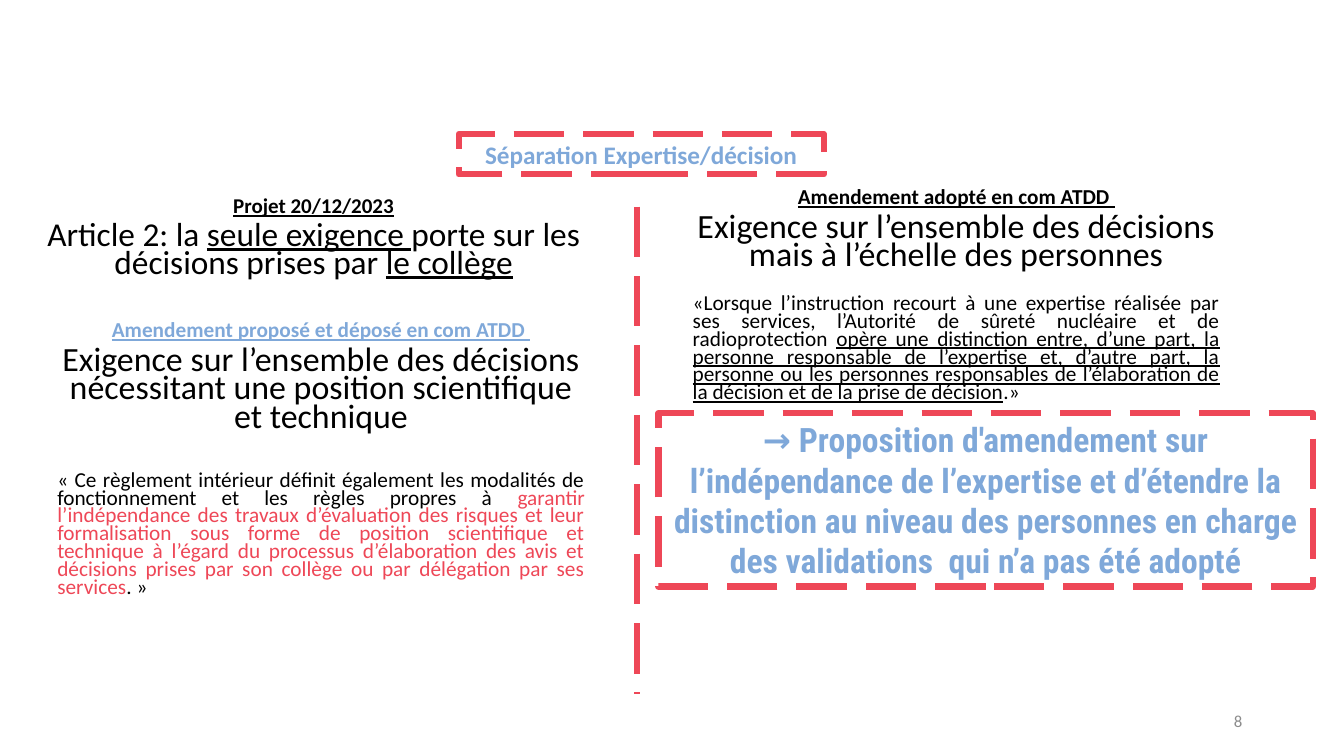
from dataclasses import dataclass

from lxml import etree
from pptx import Presentation
from pptx.dml.color import RGBColor
from pptx.enum.dml import MSO_LINE
from pptx.enum.shapes import MSO_CONNECTOR, MSO_SHAPE
from pptx.enum.text import MSO_ANCHOR, MSO_AUTO_SIZE, PP_ALIGN
from pptx.oxml.ns import qn
from pptx.util import Inches, Pt

LONG_DASH = MSO_LINE.LONG_DASH
STRAIGHT = MSO_CONNECTOR.STRAIGHT
RECTANGLE = MSO_SHAPE.RECTANGLE
TOP, MIDDLE = MSO_ANCHOR.TOP, MSO_ANCHOR.MIDDLE
NO_AUTOFIT = MSO_AUTO_SIZE.NONE
CENTER, JUSTIFY, RIGHT = PP_ALIGN.CENTER, PP_ALIGN.JUSTIFY, PP_ALIGN.RIGHT
TWO_CONTENT_LAYOUT = 3


@dataclass(frozen=True)
class Theme:
    black: str = "000000"
    red: str = "EE4757"
    blue: str = "7FA8D9"
    grey: str = "8C8C8C"
    body_font: str = "Calibri"
    proposal_font: str = "Roboto Condensed"
    project_heading: float = 15
    project_claim: float = 23.8
    quote: float = 15.2
    claim: float = 24.2
    title: float = 18
    proposal: float = 24
    page_number: float = 12
    dash_width: float = 4.5
    column_spacing: float = 0.7


THEME = Theme()


@dataclass(frozen=True)
class Span:
    text: str
    color: str = THEME.black
    underline: bool = False


@dataclass(frozen=True)
class Line:
    """One paragraph with its own size and alignment."""
    spans: tuple[Span, ...]
    size: float
    bold: bool = False
    align: PP_ALIGN = CENTER
    before: float = 5
    font: str = THEME.body_font


@dataclass(frozen=True)
class Box:
    left: float
    top: float
    width: float
    height: float

    def lengths(self) -> tuple:
        return tuple(Inches(v) for v in (self.left, self.top, self.width, self.height))


def place(shape, box: Box) -> None:
    shape.left, shape.top, shape.width, shape.height = box.lengths()


def write(shape, lines: list[Line], anchor=TOP, column: bool = False) -> None:
    """Fill a shape with text; a column is indented, unbulleted and tightly set."""
    frame = shape.text_frame
    frame.word_wrap = True
    frame.auto_size = NO_AUTOFIT
    frame.vertical_anchor = anchor
    for index, line in enumerate(lines):
        paragraph = frame.paragraphs[0] if index == 0 else frame.add_paragraph()
        paragraph.alignment = line.align
        paragraph.space_before = Pt(line.before if index else 0)
        paragraph.space_after = Pt(0)
        if column:
            paragraph.level = 1
            paragraph.line_spacing = THEME.column_spacing
            properties = paragraph._p.get_or_add_pPr()
            properties.set("marL", str(Inches(0.5)))
            properties.set("indent", "0")
            etree.SubElement(properties, qn("a:buNone"))
        for span in line.spans:
            run = paragraph.add_run()
            run.text = span.text
            font = run.font
            font.name, font.size, font.bold = line.font, Pt(line.size), line.bold
            font.underline = span.underline
            font.color.rgb = RGBColor.from_string(span.color)


def dash(line) -> None:
    line.color.rgb = RGBColor.from_string(THEME.red)
    line.width = Pt(THEME.dash_width)
    line.dash_style = LONG_DASH


def add_divider(slide, x: float, top: float, bottom: float) -> None:
    divider = slide.shapes.add_connector(
        STRAIGHT, Inches(x), Inches(top), Inches(x), Inches(bottom))
    dash(divider.line)
    etree.SubElement(divider._element.spPr, qn("a:effectLst"))


PROJECT = [
    Line((Span("Projet 20/12/2023", underline=True),), THEME.project_heading, bold=True),
    Line((Span("Article 2: la "), Span("seule exigence ", underline=True),
          Span("porte sur les décisions prises par "),
          Span("le collège", underline=True)), THEME.project_claim),
]
PROPOSED = [
    Line((Span("Amendement proposé et déposé en com ATDD ", THEME.blue, True),),
         THEME.quote, bold=True),
    Line((Span("Exigence sur l’ensemble des décisions nécessitant une position "
               "scientifique et technique"),), THEME.claim),
    Line((Span("« Ce règlement intérieur définit également les modalités de "
               "fonctionnement et les règles propres à "),
          Span("garantir l’indépendance des travaux d’évaluation des risques et leur "
               "formalisation sous forme de position scientifique et technique à "
               "l’égard du processus d’élaboration des avis et décisions prises par "
               "son collège ou par délégation par ses services", THEME.red),
          Span(". »")), THEME.quote, align=JUSTIFY, before=28),
]
ADOPTED = [
    Line((Span("Amendement adopté en com ATDD ", underline=True),),
         THEME.quote, bold=True),
    Line((Span("Exigence sur l’ensemble des décisions mais à l’échelle des "
               "personnes"),), THEME.claim),
    Line((Span("«Lorsque l’instruction recourt à une expertise réalisée par ses "
               "services, l’Autorité de sûreté nucléaire et de radioprotection "),
          Span("opère une distinction entre, d’une part, la personne responsable de "
               "l’expertise et, d’autre part, la personne ou les personnes "
               "responsables de l’élaboration de la décision et de la prise de "
               "décision", underline=True),
          Span(".»")), THEME.quote, align=JUSTIFY, before=17),
]
TITLE = [Line((Span("Séparation Expertise/décision", THEME.blue),),
              THEME.title, bold=True)]
PROPOSAL = [
    Line((Span("→ Proposition d'amendement sur l’indépendance de l’expertise et "
               "d’étendre la distinction au niveau des personnes en charge des "
               "validations  qui n’a pas été adopté", THEME.blue),),
         THEME.proposal, bold=True, font=THEME.proposal_font),
]
PAGE_NUMBER = [Line((Span("8", THEME.grey),), THEME.page_number, align=RIGHT)]


def main() -> None:
    deck = Presentation()
    deck.slide_width, deck.slide_height = Inches(13.33), Inches(7.5)
    slide = deck.slides.add_slide(deck.slide_layouts[TWO_CONTENT_LAYOUT])
    title, project, adopted = slide.placeholders

    add_divider(slide, 6.32, 2.05, 6.89)

    place(title, Box(4.55, 1.33, 3.62, 0.4))
    dash(title.line)
    write(title, TITLE, MIDDLE)

    place(project, Box(-0.19, 1.93, 6.1, 1.04))
    write(project, PROJECT, column=True)

    proposed = slide.shapes.add_textbox(*Box(-0.03, 3.16, 5.93, 3.27).lengths())
    write(proposed, PROPOSED, column=True)

    place(adopted, Box(6.27, 1.84, 5.93, 3.27))
    write(adopted, ADOPTED, column=True)

    proposal = slide.shapes.add_shape(RECTANGLE, *Box(6.53, 4.1, 6.49, 1.72).lengths())
    proposal.shadow.inherit = False
    proposal.fill.background()
    dash(proposal.line)
    write(proposal, PROPOSAL, MIDDLE)

    page_number = slide.shapes.add_textbox(*Box(9.42, 6.95, 3, 0.4).lengths())
    write(page_number, PAGE_NUMBER, MIDDLE)

    deck.save("out.pptx")


if __name__ == "__main__":
    main()
